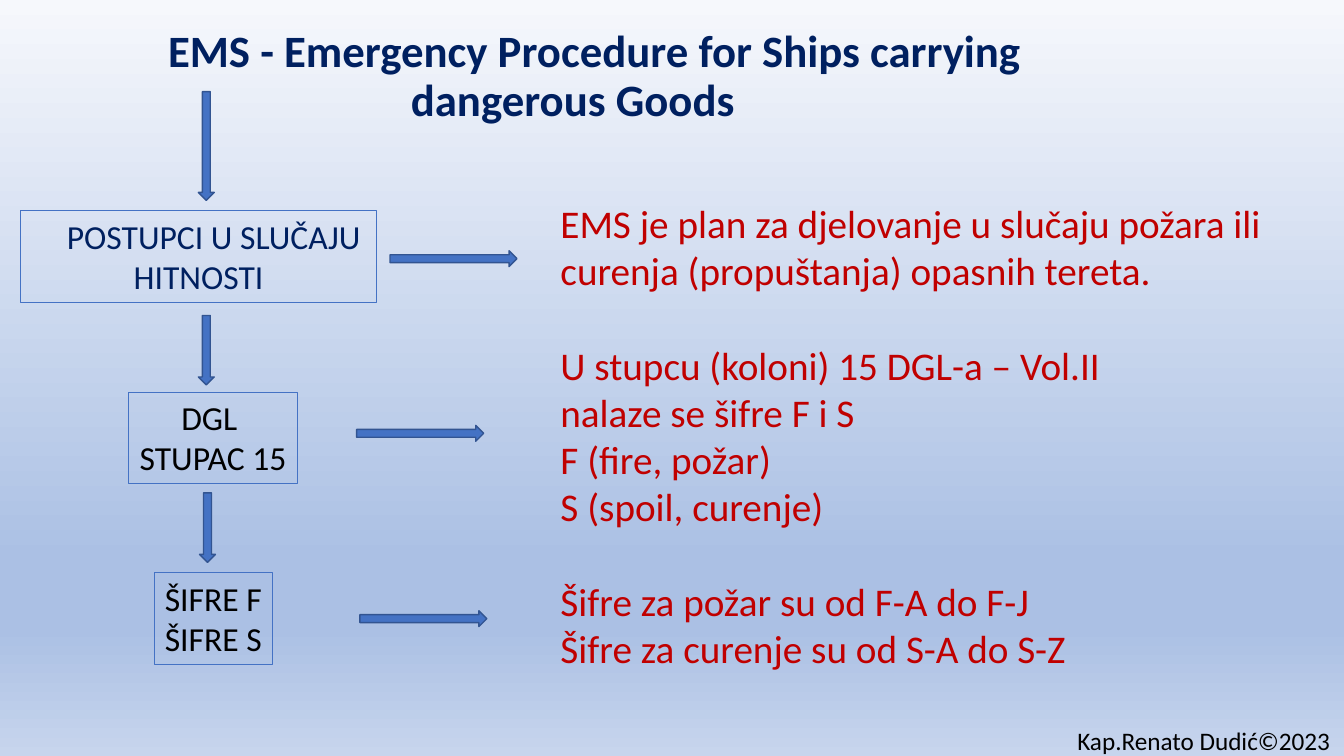
from dataclasses import dataclass

from lxml.etree import SubElement
from pptx import Presentation
from pptx.dml.color import RGBColor
from pptx.enum.shapes import MSO_SHAPE
from pptx.enum.text import MSO_ANCHOR, MSO_AUTO_SIZE, PP_ALIGN
from pptx.oxml.ns import qn
from pptx.util import Cm, Pt

NAVY, RED, BLACK = "002060", "C00000", "000000"
BLUE, DARK_BLUE = "4472C4", "325491"
BACKGROUND_STOPS = [(0, "F6F8FC"), (74, "ABC0E4"), (83, "ABC0E4"), (100, "C7D5ED")]


@dataclass
class Line:
    text: str
    left_margin: float = 0
    right_margin: float = 0
    space_before: float = 0


@dataclass
class StepBox:
    left: float
    top: float
    width: float
    lines: list[Line]
    color: str = BLACK


@dataclass
class Arrow:
    left: float
    top: float
    length: float
    down: bool = False


TITLE_LINES = [
    Line("EMS - Emergency Procedure for Ships carrying", left_margin=1.77),
    Line("dangerous Goods", left_margin=7.89),
]
EXPLANATION_LINES = [
    Line("EMS je plan za djelovanje u slučaju požara ili curenja (propuštanja) opasnih tereta."),
    Line("U stupcu (koloni) 15 DGL-a – Vol.II", space_before=34),
    Line("nalaze se šifre F i S"),
    Line("F (fire, požar)"),
    Line("S (spoil, curenje)"),
    Line("Šifre za požar su od F-A do F-J", space_before=34),
    Line("Šifre za curenje su od S-A do S-Z"),
]
STEP_BOXES = [
    StepBox(0.51, 5.31, 8.99,
            [Line("POSTUPCI U SLUČAJU", left_margin=0.76), Line("HITNOSTI")], NAVY),
    StepBox(3.25, 9.88, 4.24, [Line("DGL", right_margin=0.19), Line("STUPAC 15")]),
    StepBox(3.89, 14.43, 2.97, [Line("ŠIFRE F"), Line("ŠIFRE S")]),
]
STEP_HEIGHT = 2.31
ARROWS = [
    Arrow(5, 2.31, 2.74, down=True),
    Arrow(5, 7.95, 1.75, down=True),
    Arrow(5.03, 12.42, 1.75, down=True),
    Arrow(9.83, 6.32, 3.2),
    Arrow(8.99, 10.72, 3.2),
    Arrow(9.07, 15.39, 3.2),
]
ARROW_THICKNESS = 0.4


def rgb(color: str) -> RGBColor:
    return RGBColor.from_string(color)


def place(shape, left: float, top: float, width: float, height: float) -> None:
    shape.left, shape.top = Cm(left), Cm(top)
    shape.width, shape.height = Cm(width), Cm(height)


def write_lines(shape, lines: list[Line], size: float, color: str, align=PP_ALIGN.LEFT,
                bold: bool = False, spacing: float = 1.0, wrap: bool = True) -> None:
    frame = shape.text_frame
    frame.text = "\n".join(line.text for line in lines)
    frame.word_wrap = wrap
    frame.auto_size = MSO_AUTO_SIZE.NONE
    frame.vertical_anchor = MSO_ANCHOR.TOP
    for para, line in zip(frame.paragraphs, lines):
        properties = para._p.get_or_add_pPr()
        properties.set("marL", str(Cm(line.left_margin)))
        properties.set("marR", str(Cm(line.right_margin)))
        properties.set("indent", "0")
        SubElement(properties, qn("a:buNone"))
        para.alignment = align
        para.line_spacing = spacing
        para.space_before = Pt(line.space_before)
        para.space_after = Pt(0)
        for span in para.runs:
            span.font.name = "Calibri"
            span.font.size = Pt(size)
            span.font.bold = bold
            span.font.color.rgb = rgb(color)


def paint_background(slide) -> None:
    fill = slide.background.fill
    fill.gradient()
    fill.gradient_angle = 270
    stop_list = slide.element.find(".//" + qn("a:gsLst"))
    for stop in list(stop_list):
        stop_list.remove(stop)
    for percent, color in BACKGROUND_STOPS:
        stop = SubElement(stop_list, qn("a:gs"), pos=str(percent * 1000))
        SubElement(stop, qn("a:srgbClr"), val=color)


def add_step_box(slide, step: StepBox) -> None:
    box = slide.shapes.add_shape(MSO_SHAPE.RECTANGLE, Cm(step.left), Cm(step.top),
                                 Cm(step.width), Cm(STEP_HEIGHT))
    box.shadow.inherit = False
    box.fill.background()
    box.line.color.rgb = rgb(BLUE)
    box.line.width = Pt(0.75)
    write_lines(box, step.lines, 24, step.color, align=PP_ALIGN.CENTER)


def add_block_arrow(slide, arrow: Arrow) -> None:
    if arrow.down:
        preset, width, height = MSO_SHAPE.DOWN_ARROW, ARROW_THICKNESS, arrow.length
    else:
        preset, width, height = MSO_SHAPE.RIGHT_ARROW, arrow.length, ARROW_THICKNESS
    shape = slide.shapes.add_shape(preset, Cm(arrow.left), Cm(arrow.top), Cm(width), Cm(height))
    shape.shadow.inherit = False
    shape.fill.solid()
    shape.fill.fore_color.rgb = rgb(BLUE)
    shape.line.color.rgb = rgb(DARK_BLUE)
    shape.line.width = Pt(1)


def main() -> None:
    deck = Presentation()
    deck.slide_width, deck.slide_height = Cm(33.87), Cm(19.05)
    page = deck.slides.add_slide(deck.slide_layouts[1])
    paint_background(page)

    title, body = page.shapes.title, page.placeholders[1]
    place(title, 2.21, 0.61, 23.88, 2.08)
    write_lines(title, TITLE_LINES, 32, NAVY, bold=True, spacing=0.9)
    place(body, 13.87, 4.9, 18.29, 12.22)
    write_lines(body, EXPLANATION_LINES, 28, RED)

    for step in STEP_BOXES:
        add_step_box(page, step)
    for arrow in ARROWS:
        add_block_arrow(page, arrow)

    credit = page.shapes.add_textbox(Cm(26.9), Cm(18.14), Cm(6.96), Cm(1.02))
    write_lines(credit, [Line("Kap.Renato Dudić©2023")], 18, BLACK, wrap=False)
    deck.save("out.pptx")


if __name__ == "__main__":
    main()
